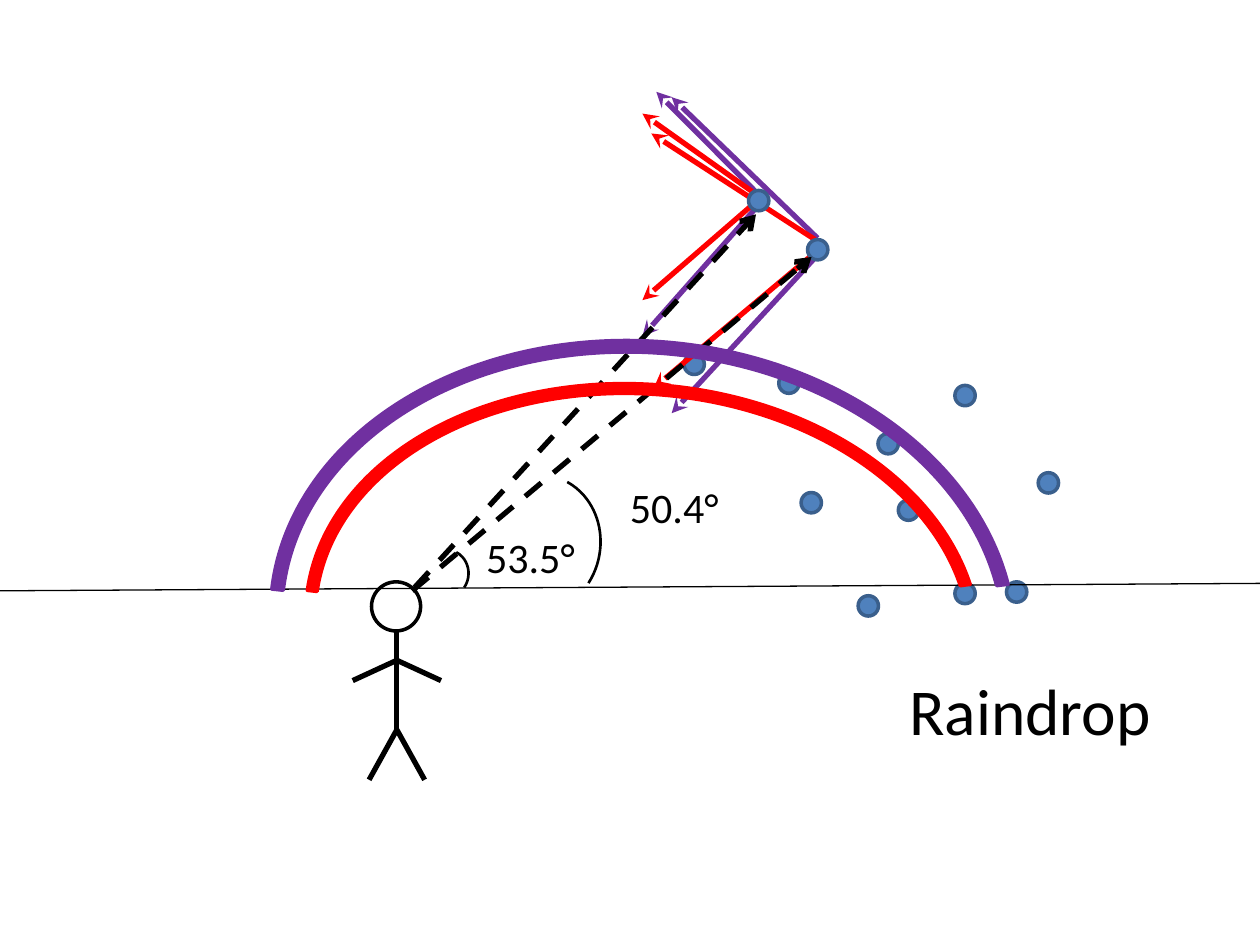
from dataclasses import dataclass
from lxml.etree import SubElement
from pptx import Presentation
from pptx.dml.color import RGBColor
from pptx.enum.dml import MSO_LINE
from pptx.enum.shapes import MSO_CONNECTOR, MSO_SHAPE as SHAPE
from pptx.enum.text import MSO_ANCHOR as ANCHOR, PP_ALIGN as ALIGN
from pptx.oxml.ns import qn
from pptx.util import Cm, Pt


@dataclass(frozen=True)
class Theme:
    black: str = "000000"
    violet: str = "7030A0"
    red: str = "FF0000"
    drop: str = "4F81BD"
    drop_edge: str = "3A5F8C"
    font: str = "Calibri"
    caption: float = 37.4
    angle: float = 24


theme = Theme()
prs = Presentation()
prs.slide_width, prs.slide_height = Cm(25.4), Cm(19.05)
sp = prs.slides.add_slide(prs.slide_layouts[6]).shapes


def add_line(x1, y1, x2, y2, color=theme.black, width=3, dash=None, tail=None):
    s = sp.add_connector(MSO_CONNECTOR.STRAIGHT, Cm(x1), Cm(y1), Cm(x2), Cm(y2))
    s.line.color.rgb = RGBColor.from_string(color)
    s.line.width = Pt(width)
    if dash:
        s.line.dash_style = dash
    if tail:
        SubElement(s.line._get_or_add_ln(), qn("a:tailEnd")).set("type", tail)
    SubElement(s._element.spPr, qn("a:effectLst"))


def add_text(text, x, y, w, h, size=theme.angle, align=ALIGN.LEFT, anchor=ANCHOR.TOP):
    tf = sp.add_textbox(Cm(x), Cm(y), Cm(w), Cm(h)).text_frame
    tf.word_wrap = True
    tf.vertical_anchor = anchor
    p = tf.paragraphs[0]
    p.alignment = align
    r = p.add_run()
    r.text = text
    r.font.name = theme.font
    r.font.size = Pt(size)
    r.font.color.rgb = RGBColor.from_string(theme.black)


waist, shoulder = (8, 14.71), (8, 13.31)
add_line(8, 12.73, *waist)
for side in (-1, 1):
    add_line(*waist, 8 + side * 0.56, 15.72)
    add_line(8 + side * 0.89, 13.72, *shoulder)

rain = [
    (15.7, 7.52), (16.15, 9.93), (19.25, 7.77), (18.11, 10.08), (20.93, 9.53),
    (17.7, 8.74), (17.3, 12.01), (20.29, 11.73), (13.79, 7.14), (19.25, 11.76),
]
refracting = [(15.09, 3.84), (16.28, 4.83)]
violet_ray = dict(color=theme.violet, tail="stealth")
red_ray = dict(color=theme.red, tail="stealth")
sight = dict(dash=MSO_LINE.DASH, tail="arrow")
rays = [
    (15.21, 3.84, 13.23, 1.85, violet_ray),
    (15.24, 4.19, 12.95, 6.78, violet_ray),
    (15.16, 3.86, 12.95, 2.29, red_ray),
    (15.19, 4.11, 12.95, 6.05, red_ray),
    (16.48, 4.8, 13.54, 1.96, violet_ray),
    (16.51, 5.11, 13.54, 8.33, violet_ray),
    (16.43, 4.83, 13.13, 2.69, red_ray),
    (16.48, 5.05, 13.18, 7.82, red_ray),
    (8.36, 11.84, 15.24, 4.32, sight),
]
front_lines = [
    (25.4, 11.76, 0, 11.91, dict(width=0.75)),
    (8.31, 11.91, 16.36, 5.18, sight),
]
for drops, lines in ((rain, rays), (refracting, front_lines)):
    for x, y in drops:
        s = sp.add_shape(SHAPE.OVAL, Cm(x), Cm(y), Cm(0.41), Cm(0.41))
        s.shadow.inherit = False
        s.fill.solid()
        s.fill.fore_color.rgb = RGBColor.from_string(theme.drop)
        s.line.color.rgb = RGBColor.from_string(theme.drop_edge)
        s.line.width = Pt(2)
    for x1, y1, x2, y2, style in lines:
        add_line(x1, y1, x2, y2, **style)

add_text("Raindrop", 17.91, 13.21, 5.72, 2.16, size=theme.caption,
         align=ALIGN.CENTER, anchor=ANCHOR.MIDDLE)
add_text("53.5°", 9.55, 10.59, 3.15, 1.27)
add_text("50.4°", 12.45, 9.58, 3.15, 1.27)

sweep = (150.86, 209.89)
curves = [
    (SHAPE.OVAL, 7.49, 11.73, 0.99, 0.99, 0, (), None, theme.black, 2),
    (SHAPE.ARC, 8.48, 11.1, 0.99, 0.94, 106.8, sweep, None, theme.black, 1.5),
    (SHAPE.ARC, 9.35, 9.68, 2.87, 2.62, 106.8, sweep, None, theme.black, 1.5),
    (SHAPE.BLOCK_ARC, 5.44, 6.88, 15.04, 11.56, 4.8, (108.71, 209.03, 0.02),
     theme.violet, theme.violet, 2),
    (SHAPE.BLOCK_ARC, 6.15, 7.75, 13.61, 9.86, 4.8, (109.06, 208.47, 0.02),
     theme.red, theme.red, 2),
]
for kind, x, y, w, h, turn, adjustments, fill, color, width in curves:
    s = sp.add_shape(kind, Cm(x), Cm(y), Cm(w), Cm(h))
    s.shadow.inherit = False
    s.rotation = turn
    for i, value in enumerate(adjustments):
        s.adjustments[i] = value
    if kind == SHAPE.ARC:
        s._element.spPr.xfrm.set("flipH", "1")
    if fill:
        s.fill.solid()
        s.fill.fore_color.rgb = RGBColor.from_string(fill)
    else:
        s.fill.background()
    s.line.color.rgb = RGBColor.from_string(color)
    s.line.width = Pt(width)

prs.save("out.pptx")
